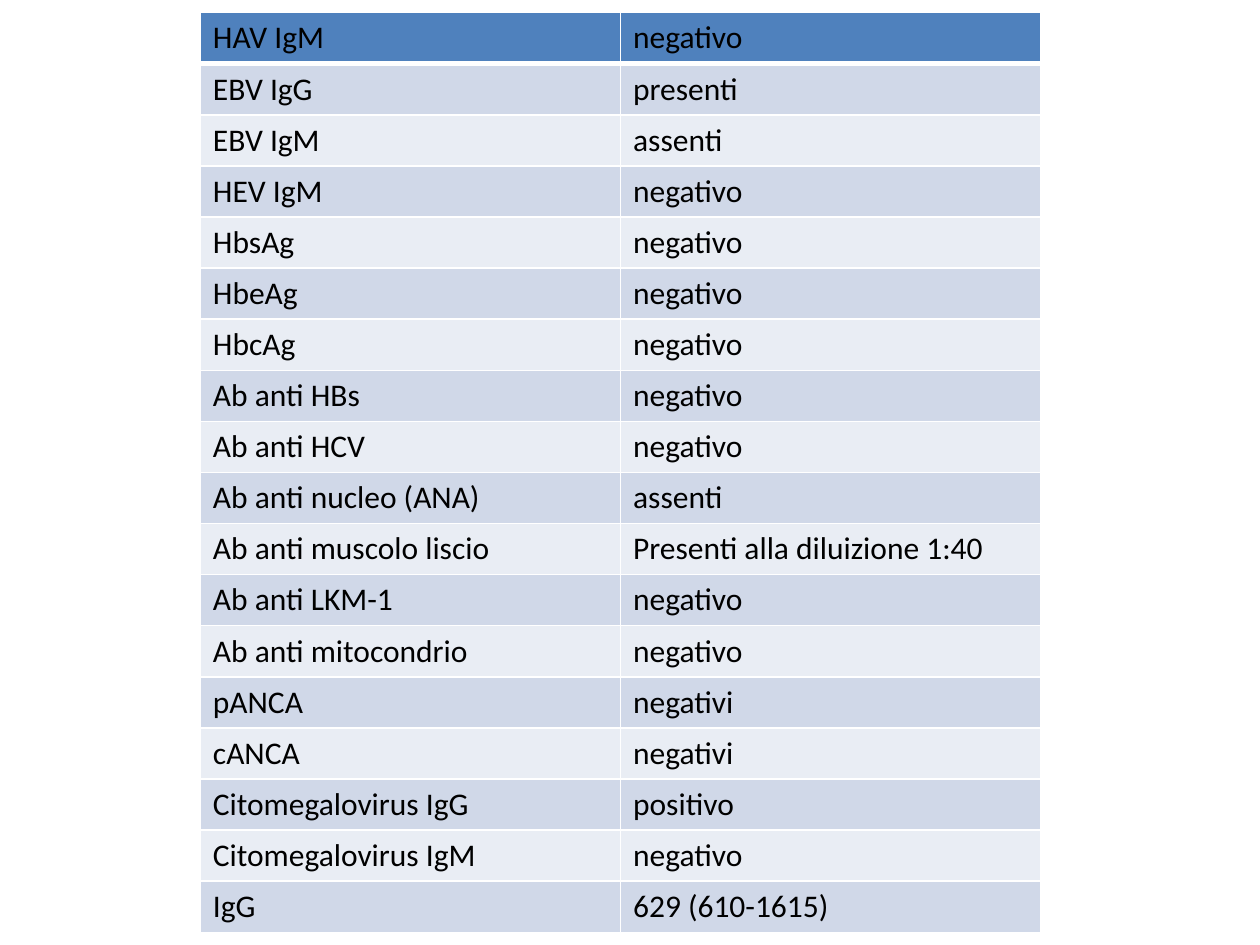
from lxml import etree
from pptx import Presentation
from pptx.dml.color import RGBColor
from pptx.oxml.ns import qn
from pptx.util import Inches, Pt

SLIDE_WIDTH, SLIDE_HEIGHT = Inches(10), Inches(7.5)
TABLE_LEFT, TABLE_TOP = Inches(1.59), Inches(0.1)
TABLE_WIDTH, TABLE_HEIGHT = Inches(6.67), Inches(7.3)

HEADER_BLUE = RGBColor(0x4F, 0x81, 0xBD)
BANDS = (RGBColor(0xE9, 0xED, 0xF4), RGBColor(0xD0, 0xD8, 0xE8))
BLACK = RGBColor(0, 0, 0)
WHITE = RGBColor(0xFF, 0xFF, 0xFF)

TEST_RESULTS = [
    ("HAV IgM", "negativo"),
    ("EBV IgG", "presenti"),
    ("EBV IgM", "assenti"),
    ("HEV IgM", "negativo"),
    ("HbsAg", "negativo"),
    ("HbeAg", "negativo"),
    ("HbcAg", "negativo"),
    ("Ab anti HBs", "negativo"),
    ("Ab anti HCV", "negativo"),
    ("Ab anti nucleo (ANA)", "assenti"),
    ("Ab anti muscolo liscio", "Presenti alla diluizione 1:40"),
    ("Ab anti LKM-1", "negativo"),
    ("Ab anti mitocondrio", "negativo"),
    ("pANCA", "negativi"),
    ("cANCA", "negativi"),
    ("Citomegalovirus IgG", "positivo"),
    ("Citomegalovirus IgM", "negativo"),
    ("IgG", "629 (610-1615)"),
]


def set_borders(cell, widths):
    """Draw white borders; widths are points for left, right, top, bottom."""
    properties = cell._tc.get_or_add_tcPr()
    for side, width in zip("LRTB", widths):
        line = etree.SubElement(properties, qn(f"a:ln{side}"), w=str(Pt(width)))
        fill = etree.SubElement(line, qn("a:solidFill"))
        etree.SubElement(fill, qn("a:srgbClr"), val=str(WHITE))


def fill_cell(cell, text, color, border_widths):
    set_borders(cell, border_widths)
    cell.fill.solid()
    cell.fill.fore_color.rgb = color
    cell.text = text
    font = cell.text_frame.paragraphs[0].font
    font.name = "Calibri"
    font.size = Pt(18)
    font.bold = False
    font.color.rgb = BLACK


def add_results_table(slide, results):
    table = slide.shapes.add_table(
        len(results), len(results[0]),
        TABLE_LEFT, TABLE_TOP, TABLE_WIDTH, TABLE_HEIGHT,
    ).table
    for row, result in enumerate(results):
        color = HEADER_BLUE if row == 0 else BANDS[row % 2]
        top = 3 if row == 1 else 1
        bottom = 3 if row == 0 else 1
        for column, text in enumerate(result):
            fill_cell(table.cell(row, column), text, color, (1, 1, top, bottom))


def main():
    presentation = Presentation()
    presentation.slide_width = SLIDE_WIDTH
    presentation.slide_height = SLIDE_HEIGHT
    slide = presentation.slides.add_slide(presentation.slide_layouts[6])
    add_results_table(slide, TEST_RESULTS)
    presentation.save("out.pptx")


if __name__ == "__main__":
    main()
